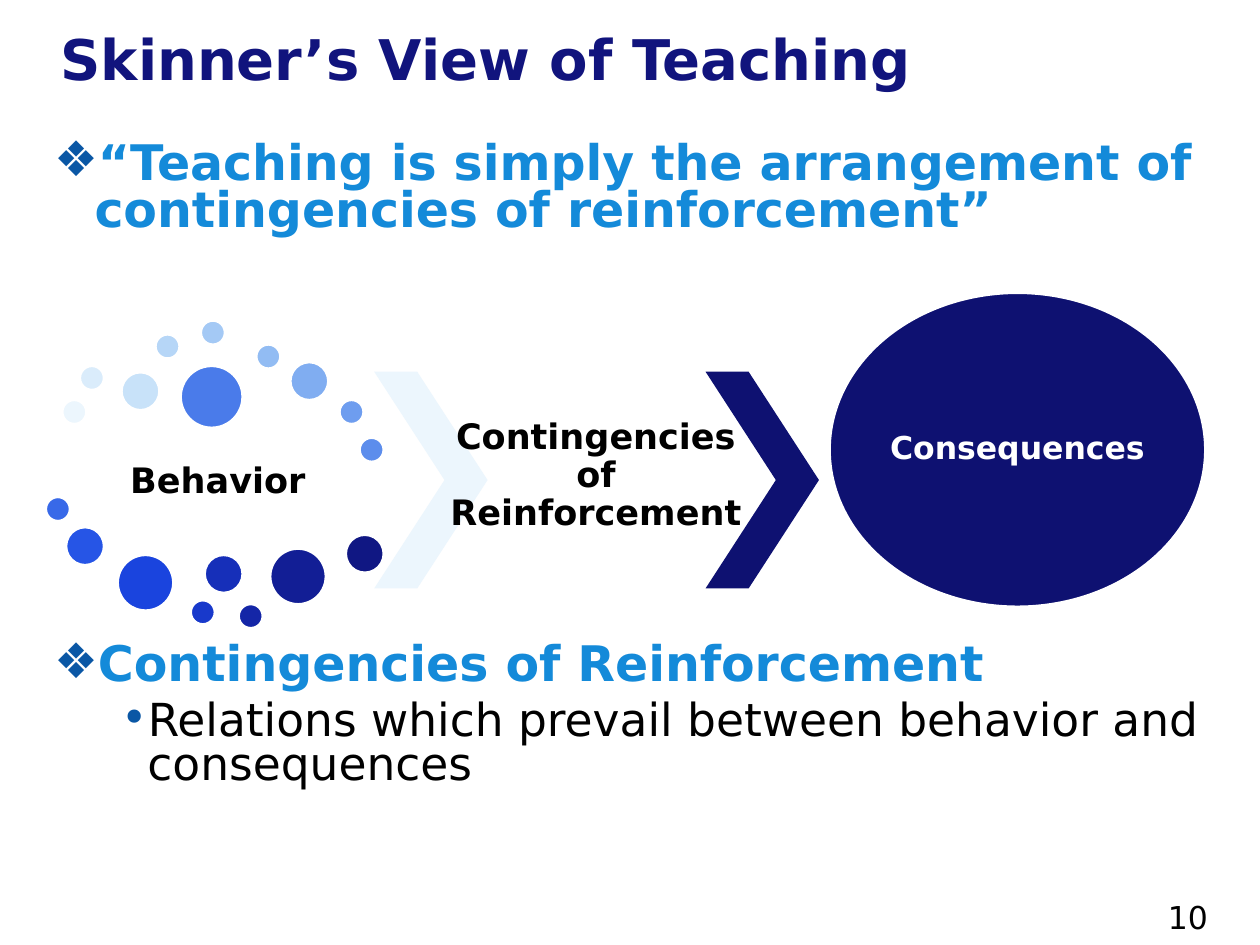
from lxml import etree
from pptx import Presentation
from pptx.dml.color import RGBColor
from pptx.enum.shapes import MSO_SHAPE
from pptx.enum.text import MSO_ANCHOR, MSO_AUTO_SIZE, PP_ALIGN
from pptx.oxml.ns import qn
from pptx.util import Inches, Pt

OVAL, CHEVRON = MSO_SHAPE.OVAL, MSO_SHAPE.CHEVRON
TOP, MIDDLE = MSO_ANCHOR.TOP, MSO_ANCHOR.MIDDLE
LEFT, CENTER = PP_ALIGN.LEFT, PP_ALIGN.CENTER

THEME = {
    "font": "DejaVu Sans",
    "title": "11147D", "heading": "148AD9", "bullet": "0A57A5",
    "text": "000000", "white": "FFFFFF", "pale": "ECF6FD", "navy": "0E1171",
    "title_size": 32, "heading_size": 28, "detail_size": 26,
    "label_size": 20, "small_size": 18,
}

# Content; places are columns and rows of a 100 x 75 grid
COLUMNS, ROWS = 100, 75
TITLE = "Skinner’s View of Teaching"
PAGE_NUMBER = "10"
DIAGRAM_GAP = 233  # points left free for the diagram between the two headings
HEADING = dict(level=0, bullet="❖", margin=0.32, hanging=0.32, bold=True,
               size=THEME["heading_size"], color=THEME["heading"])
DETAIL = dict(level=1, bullet="•", margin=0.74, hanging=0.21, bold=False,
              size=THEME["detail_size"], color=THEME["text"])
POINTS = [
    ("“Teaching is simply the arrangement of contingencies of reinforcement”", HEADING, 0),
    ("Contingencies of Reinforcement", HEADING, DIAGRAM_GAP),
    ("Relations which prevail between behavior and consequences", DETAIL, 6),
]
LABELS = [
    ("Behavior", (5, 34.2, 24.6, 8.1)),
    ("Contingencies of Reinforcement", (35, 29.2, 24.6, 17.2)),
]
CHEVRONS = [(29.7, THEME["pale"]), (56, THEME["navy"])]
CHEVRON_TOP, CHEVRON_WIDTH, CHEVRON_HEIGHT = 29.5, 9, 17.2
RESULT = ("Consequences", (65.8, 23.2, 29.9, 25))
SMALL, MEDIUM, LARGE, HUGE = 2, 3.1, 4.5, 5
DOTS = [  # column, row, diameter, colour from light to dark
    (4.9, 31.7, SMALL, "ECF6FD"), (6.3, 29, SMALL, "DAECFB"),
    (9.6, 29.5, MEDIUM, "C8E2F9"), (12.3, 26.5, SMALL, "B6D6F7"),
    (15.9, 25.4, SMALL, "A4C9F5"), (20.3, 27.3, SMALL, "92BCF3"),
    (23, 28.7, MEDIUM, "80ADF1"), (26.9, 31.7, SMALL, "6E9DEF"),
    (28.5, 34.7, SMALL, "5C8DEC"), (14.3, 29, HUGE, "4A7BEA"),
    (3.6, 39.4, SMALL, "3869E8"), (5.2, 41.8, MEDIUM, "2655E6"),
    (9.3, 44, LARGE, "1A44DE"), (15.1, 47.6, SMALL, "1839CB"),
    (16.2, 44, MEDIUM, "162FB9"), (18.9, 47.9, SMALL, "1426A7"),
    (21.4, 43.5, LARGE, "121E95"), (27.4, 42.4, MEDIUM, "101783"),
]

deck = Presentation()
deck.slide_width, deck.slide_height = Inches(10), Inches(7.5)
page = deck.slides.add_slide(deck.slide_layouts[1])


def place(column, row, width, height):
    across, down = deck.slide_width / COLUMNS, deck.slide_height / ROWS
    return (round(column * across), round(row * down),
            round(width * across), round(height * down))


def move(box, area):
    box.left, box.top, box.width, box.height = place(*area)


def set_frame(frame, anchor=TOP, inset=None):
    frame.word_wrap = True
    frame.auto_size = MSO_AUTO_SIZE.NONE
    frame.vertical_anchor = anchor
    if inset is not None:
        frame.margin_left = frame.margin_right = Inches(inset)
        frame.margin_top = frame.margin_bottom = Inches(inset)


def write(para, text, *, size, color, bold=False, align=LEFT, spacing=1.0,
          before=0, level=0, margin=0, hanging=0, bullet=None):
    para.level = level
    para.alignment = align
    para.line_spacing = spacing
    para.space_before = Pt(before)
    properties = para._p.get_or_add_pPr()
    properties.set("marL", str(Inches(margin)))
    properties.set("indent", str(-Inches(hanging)))
    if bullet:
        tint = etree.SubElement(properties, qn("a:buClr"))
        etree.SubElement(tint, qn("a:srgbClr"), val=THEME["bullet"])
        etree.SubElement(properties, qn("a:buFont"), typeface=THEME["font"])
        etree.SubElement(properties, qn("a:buChar"), char=bullet)
    span = para.add_run()
    span.text = text
    span.font.name = THEME["font"]
    span.font.size = Pt(size)
    span.font.bold = bold
    span.font.color.rgb = RGBColor.from_string(color)


def add_figure(kind, area, fill, outline=None):
    shape = page.shapes.add_shape(kind, *place(*area))
    shape.shadow.inherit = False
    shape.fill.solid()
    shape.fill.fore_color.rgb = RGBColor.from_string(fill)
    if outline:
        shape.line.color.rgb = RGBColor.from_string(outline)
        shape.line.width = Pt(2)
    else:
        shape.line.fill.background()
    return shape


def add_text(text, area, anchor=TOP, inset=None, **style):
    box = page.shapes.add_textbox(*place(*area))
    set_frame(box.text_frame, anchor, inset)
    write(box.text_frame.paragraphs[0], text, **style)


# Title and bullet list
title = page.shapes.title
move(title, (1.7, 0, 95, 9.2))
set_frame(title.text_frame, MIDDLE)
write(title.text_frame.paragraphs[0], TITLE, margin=0.21, bold=True,
      size=THEME["title_size"], color=THEME["title"])

body = page.placeholders[1]
move(body, (3.3, 10.8, 95, 54.7))
set_frame(body.text_frame)
for index, (text, style, before) in enumerate(POINTS):
    para = body.text_frame.add_paragraph() if index else body.text_frame.paragraphs[0]
    write(para, text, before=before, spacing=0.8, **style)

# Page number
add_text(PAGE_NUMBER, (91.7, 70.8, 8.3, 2.7),
         size=THEME["small_size"], color=THEME["text"])

# Ring of dots around the behavior
for column, row, diameter, color in DOTS:
    add_figure(OVAL, (column, row, diameter, diameter), color, THEME["white"])

# Chevrons and their labels
for column, color in CHEVRONS:
    chevron = add_figure(CHEVRON, (column, CHEVRON_TOP, CHEVRON_WIDTH, CHEVRON_HEIGHT), color)
    chevron.adjustments[0] = 0.62
for text, area in LABELS:
    add_text(text, area, MIDDLE, 0.03, align=CENTER, spacing=0.9, bold=True,
             size=THEME["label_size"], color=THEME["text"])

# Consequences
text, area = RESULT
result = add_figure(OVAL, area, THEME["navy"], THEME["white"])
set_frame(result.text_frame, MIDDLE, 0)
write(result.text_frame.paragraphs[0], text, align=CENTER, spacing=0.9, bold=True,
      size=THEME["small_size"], color=THEME["white"])

deck.save("out.pptx")
